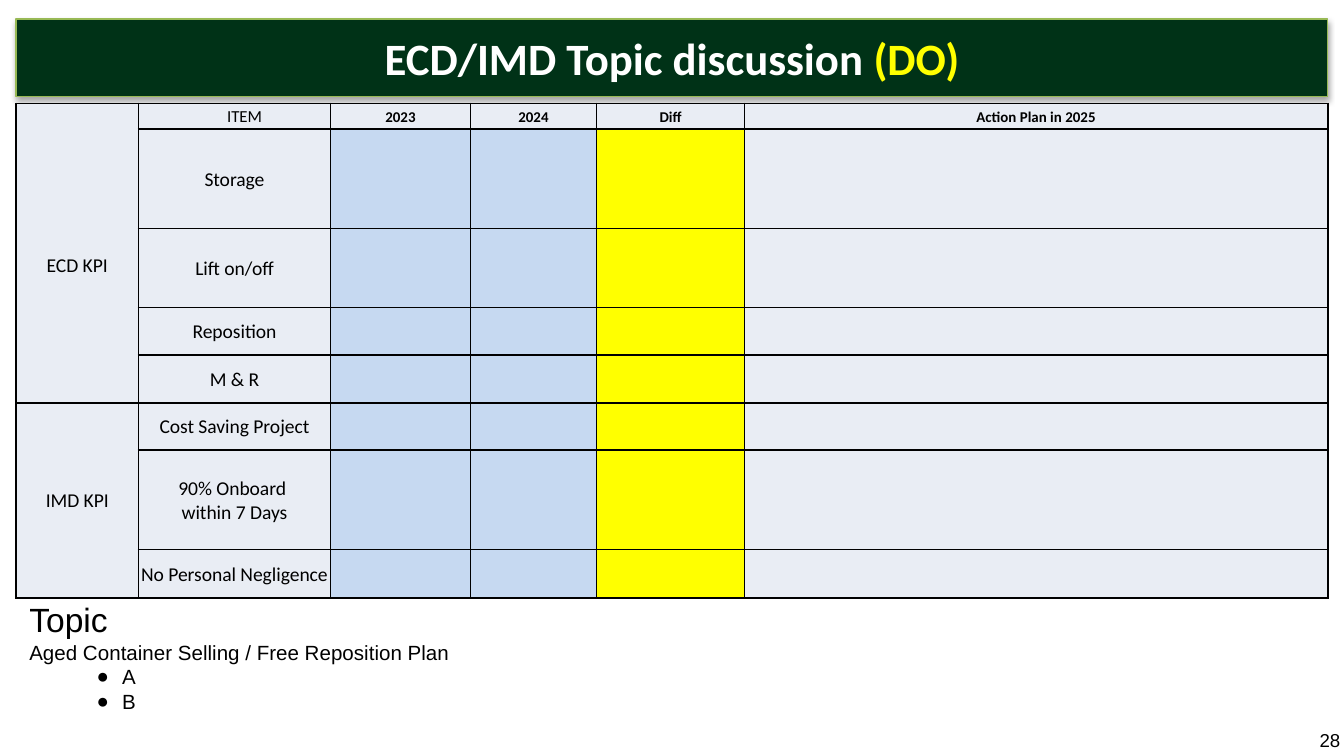
import pptx
import pptx.util
import pptx.dml.color
import pptx.enum.text
import pptx.oxml
import pptx.oxml.ns
from lxml import etree

Inches = pptx.util.Inches
Pt = pptx.util.Pt
RGBColor = pptx.dml.color.RGBColor
ALIGN = pptx.enum.text.PP_ALIGN
MIDDLE = pptx.enum.text.MSO_ANCHOR.MIDDLE

BLACK = RGBColor(0, 0, 0)
WHITE = RGBColor(255, 255, 255)
GREEN = RGBColor(0x00, 0x32, 0x17)
LIME = RGBColor(0x98, 0xB9, 0x55)
YELLOW = RGBColor(255, 255, 0)
GREY = RGBColor(0xE9, 0xED, 0xF4)
BLUE = RGBColor(0xC6, 0xD9, 0xF1)

SLIDE_WIDTH = 10
SLIDE_HEIGHT = SLIDE_WIDTH * 9 / 16
MARGIN = 0.12
CONTENT_WIDTH = SLIDE_WIDTH - 2 * MARGIN
TABLE_TOP, TABLE_HEIGHT = 0.77, 3.64

TITLE = [("ECD/IMD Topic discussion ", WHITE), ("(DO)", YELLOW)]
HEADERS = ["ITEM", "2023", "2024", "Diff", "Action Plan in 2025"]
GROUPS = [
    ("ECD KPI", [("Storage", 0.74), ("Lift on/off", 0.59), ("Reposition", 0.35), ("M & R", 0.36)]),
    ("IMD KPI", [("Cost Saving Project", 0.35), ("90% Onboard \nwithin 7 Days", 0.74),
                 ("No Personal Negligence", 0.36)]),
]
HEADER_HEIGHT = 0.19
COLUMN_WIDTHS = [0.91, 1.43, 1.04, 0.94, 1.1, 4.34]
COLUMN_FILLS = [GREY, GREY, BLUE, BLUE, YELLOW, GREY]
TOPIC = "Topic"
TOPIC_DETAIL = "Aged Container Selling / Free Reposition Plan"
TOPIC_POINTS = ["A", "B"]
PAGE_NUMBER = "28"


def add_text(para, text, size, font="Calibri", color=BLACK, bold=False, align=None):
    para.alignment = align
    span = para.add_run()
    span.text = text
    span.font.name = font
    span.font.size = Pt(size)
    span.font.bold = bold
    span.font.color.rgb = color


def set_margins(target, left, top, right, bottom):
    target.margin_left, target.margin_top = Inches(left), Inches(top)
    target.margin_right, target.margin_bottom = Inches(right), Inches(bottom)


def add_child(parent, tag, **attributes):
    child = etree.SubElement(parent, pptx.oxml.ns.qn(tag))
    for name, value in attributes.items():
        child.set(name, str(value))
    return child


def place(shape, left, top, width, height):
    shape.left, shape.top = Inches(left), Inches(top)
    shape.width, shape.height = Inches(width), Inches(height)


def add_title(page):
    title = page.shapes.title
    place(title, MARGIN, 0.14, CONTENT_WIDTH, 0.58)
    title.fill.solid()
    title.fill.fore_color.rgb = GREEN
    title.line.color.rgb = LIME
    title.line.width = Pt(0.75)
    effects = add_child(title.element.spPr, "a:effectLst")
    shadow = add_child(effects, "a:outerShdw", blurRad=Pt(3.1), dist=Pt(1.8),
                       dir=90 * 60000, rotWithShape=0)
    add_child(add_child(shadow, "a:srgbClr", val=BLACK), "a:alpha", val=35000)
    frame = title.text_frame
    frame.vertical_anchor = MIDDLE
    set_margins(frame, 0, 0, 0, 0)
    for text, color in TITLE:
        add_text(frame.paragraphs[0], text, 24, color=color, bold=True, align=ALIGN.CENTER)


def style_cell(cell, fill):
    """Give a cell thin margins, black borders and a plain fill."""
    set_margins(cell, 0.01, 0.01, 0.01, 0)
    cell.vertical_anchor = MIDDLE
    properties = cell._tc.get_or_add_tcPr()
    for side in ("a:lnL", "a:lnR", "a:lnT", "a:lnB"):
        border = add_child(properties, side, w=Pt(1))
        add_child(add_child(border, "a:solidFill"), "a:srgbClr", val=BLACK)
    cell.fill.solid()
    cell.fill.fore_color.rgb = fill


def fill_cell(cell, text, size, bold=False):
    frame = cell.text_frame
    for index, line in enumerate(text.split("\n")):
        para = frame.add_paragraph() if index else frame.paragraphs[0]
        add_text(para, line, size, bold=bold, align=ALIGN.CENTER)


def add_kpi_table(page):
    items = [item for _, members in GROUPS for item in members]
    heights = [HEADER_HEIGHT] + [height for _, height in items]
    table = page.shapes.add_table(
        len(heights), len(COLUMN_WIDTHS), Inches(MARGIN), Inches(TABLE_TOP),
        Inches(CONTENT_WIDTH), Inches(TABLE_HEIGHT)).table
    table.first_row = table.horz_banding = False
    for column, width in zip(table.columns, COLUMN_WIDTHS):
        column.width = Inches(width)
    for row_index, height in enumerate(heights):
        table.rows[row_index].height = Inches(height)
        for column_index, fill in enumerate(COLUMN_FILLS):
            style_cell(table.cell(row_index, column_index), fill if row_index else GREY)

    for column_index, header in enumerate(HEADERS, start=1):
        is_item = column_index == 1
        fill_cell(table.cell(0, column_index), header, 9 if is_item else 8, bold=not is_item)
    table.cell(0, 1).margin_left = Inches(0.16)
    for row_index, (name, _) in enumerate(items, start=1):
        fill_cell(table.cell(row_index, 1), name, 10.5)

    first, last = 0, 0
    for name, members in GROUPS:
        last += len(members)
        group_cell = table.cell(first, 0)
        group_cell.merge(table.cell(last, 0))
        fill_cell(group_cell, name, 10.5)
        first = last + 1
    table.cell(0, 0).margin_top = Inches(0.18)


def add_topic(page):
    box = page.shapes.add_textbox(Inches(MARGIN), Inches(TABLE_TOP + TABLE_HEIGHT),
                                  Inches(CONTENT_WIDTH), Inches(1.33))
    frame = box.text_frame
    frame.word_wrap = True
    add_text(frame.paragraphs[0], TOPIC, 18, font="Arial")
    add_text(frame.add_paragraph(), TOPIC_DETAIL, 11, font="Arial")
    for point in TOPIC_POINTS:
        para = frame.add_paragraph()
        para.level = 1
        add_text(para, point, 11, font="Arial")
        properties = para._p.get_or_add_pPr()
        properties.set("marL", str(Inches(0.69)))
        properties.set("indent", str(Inches(-0.19)))
        add_child(properties, "a:buFont", typeface="Arial")
        add_child(properties, "a:buChar", char="●")


def add_page_number(page):
    box = page.shapes.add_textbox(Inches(9.72), Inches(5.39), Inches(0.64), Inches(0.23))
    box.text_frame.word_wrap = True
    box.text_frame.vertical_anchor = MIDDLE
    add_text(box.text_frame.paragraphs[0], PAGE_NUMBER, 10, font="Arial")


def main():
    deck = pptx.Presentation()
    deck.slide_width, deck.slide_height = Inches(SLIDE_WIDTH), Inches(SLIDE_HEIGHT)
    page = deck.slides.add_slide(deck.slide_layouts.get_by_name("Title Only"))
    add_title(page)
    add_kpi_table(page)
    add_page_number(page)
    add_topic(page)
    deck.save("out.pptx")


if __name__ == "__main__":
    main()
